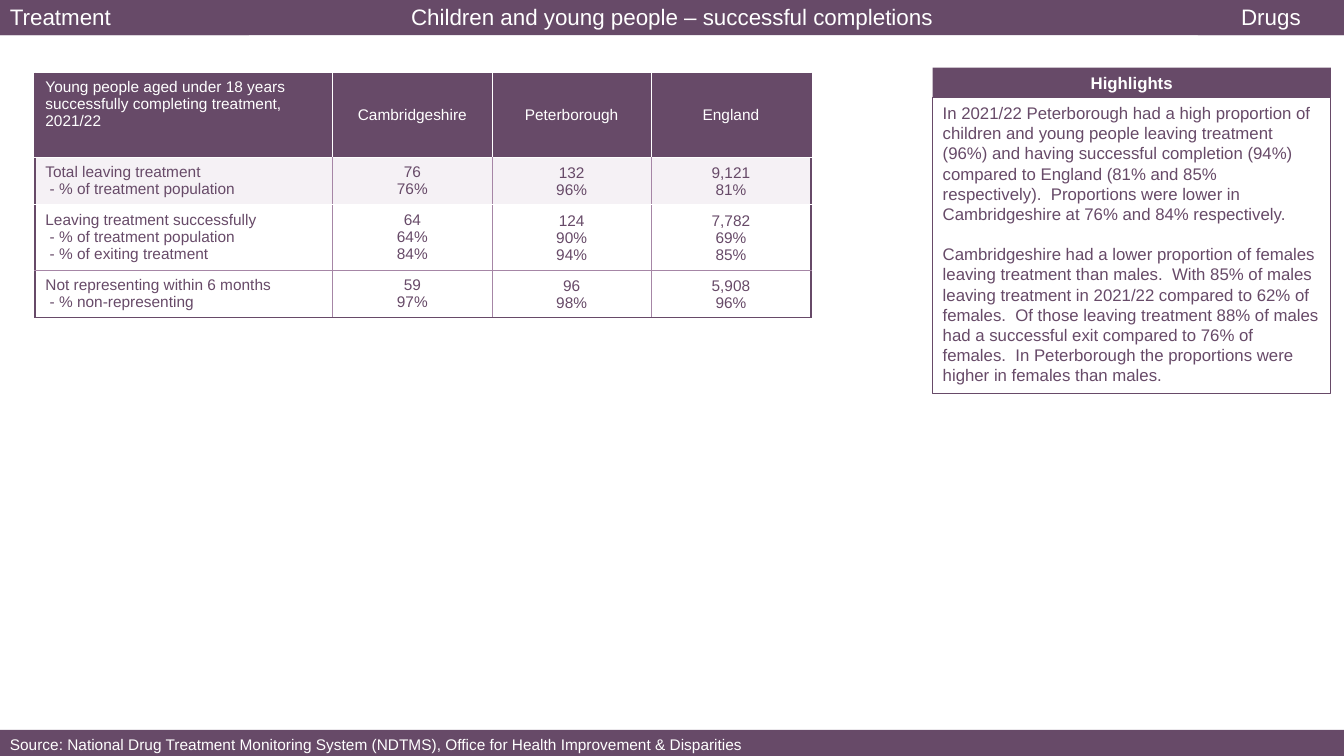
from dataclasses import dataclass
from typing import Any, Optional

from lxml import etree
from pptx import Presentation
from pptx import util as u
from pptx.dml import color
from pptx.enum import shapes, text
from pptx.oxml import ns

COLORS = {"purple": "674A68", "mauve": "A686A6", "pale": "F5F1F5", "white": "FFFFFF"}
LEFT, CENTER = text.PP_ALIGN.LEFT, text.PP_ALIGN.CENTER
MIDDLE, TOP = text.MSO_ANCHOR.MIDDLE, text.MSO_ANCHOR.TOP


@dataclass
class Panel:
    left: float
    top: float
    width: float
    height: float
    paragraphs: list[str]
    size: int
    align: Any = LEFT
    bold: bool = False
    fill: Optional[str] = "purple"
    line: Optional[str] = None
    ink: str = "white"
    gap: float = 0


@dataclass
class Row:
    height: float
    cells: list[str]
    fill: Optional[str]
    ink: str
    divider: str  # vertical rules inside the row
    below: str  # rule under the row


def rgb(name: str) -> color.RGBColor:
    return color.RGBColor.from_string(COLORS[name])


def apply(target: Any, values: dict[str, Any]) -> None:
    for name, value in values.items():
        setattr(target, name, value)


def set_fill(fill: Any, name: Optional[str]) -> None:
    if name is None:
        fill.background()
    else:
        fill.solid()
        fill.fore_color.rgb = rgb(name)


def write(frame: Any, paragraphs: list[str], size: int, ink: str, align: Any,
          bold: bool = False, gap: float = 0) -> None:
    for index, content in enumerate(paragraphs):
        paragraph = frame.paragraphs[0] if index == 0 else frame.add_paragraph()
        apply(paragraph, {"alignment": align, "line_spacing": 1.0, "space_after": u.Pt(0),
                          "space_before": u.Pt(gap if index else 0)})
        run = paragraph.add_run()
        run.text = content
        apply(run.font, {"name": "Arial", "size": u.Pt(size), "bold": bold})
        run.font.color.rgb = rgb(ink)


def draw_panel(slide: Any, panel: Panel, placeholder: Any = None) -> None:
    shape = placeholder
    if shape is None:
        shape = slide.shapes.add_shape(shapes.MSO_SHAPE.RECTANGLE, 0, 0, 0, 0)
        shape.shadow.inherit = False
    apply(shape, {side: u.Inches(getattr(panel, side))
                  for side in ("left", "top", "width", "height")})
    set_fill(shape.fill, panel.fill)
    set_fill(shape.line.fill, panel.line)
    if panel.line:
        shape.line.width = u.Pt(0.75)
    frame = shape.text_frame
    apply(frame, {"word_wrap": True, "vertical_anchor": TOP,
                  "auto_size": text.MSO_AUTO_SIZE.NONE})
    write(frame, panel.paragraphs, panel.size, panel.ink, panel.align, panel.bold, panel.gap)


def remove_bullets(shape: Any) -> None:
    for paragraph in shape.text_frame.paragraphs:
        properties = paragraph._p.get_or_add_pPr()
        properties.set("marL", "0")
        properties.set("indent", "0")
        etree.SubElement(properties, ns.qn("a:buNone"))


def set_borders(cell: Any, edges: dict[str, tuple[str, float]]) -> None:
    properties = cell._tc.get_or_add_tcPr()
    for index, (edge, (name, width)) in enumerate(edges.items()):
        line = etree.Element(ns.qn(f"a:{edge}"), w=str(u.Pt(width)))
        solid = etree.SubElement(line, ns.qn("a:solidFill"))
        etree.SubElement(solid, ns.qn("a:srgbClr"), val=COLORS[name])
        properties.insert(index, line)


def draw_table(slide: Any, left: float, top: float, widths: list[float],
               rows: list[Row]) -> None:
    last_row, last_column = len(rows) - 1, len(widths) - 1
    table = slide.shapes.add_table(
        len(rows), len(widths), u.Inches(left), u.Inches(top),
        u.Inches(sum(widths)), u.Inches(sum(row.height for row in rows))).table
    table.horz_banding = False
    for column, width in zip(table.columns, widths):
        column.width = u.Inches(width)
    outer = ("purple", 1.5)
    for r, row in enumerate(rows):
        table.rows[r].height = u.Inches(row.height)
        divider = (row.divider, 0.75)
        for c, content in enumerate(row.cells):
            cell = table.cell(r, c)
            cell.vertical_anchor = TOP if r == c == 0 else MIDDLE
            if r > 0 and c > 1:
                apply(cell, {"margin_left": u.Inches(0.01), "margin_right": u.Inches(0.01),
                             "margin_top": u.Inches(0.01), "margin_bottom": 0})
            set_fill(cell.fill, row.fill)
            write(cell.text_frame, content.split("\n"), 11, row.ink, CENTER if c else LEFT)
            set_borders(cell, {
                "lnL": divider if c else outer,
                "lnR": divider if c < last_column else outer,
                "lnT": (rows[r - 1].below, 0.75) if r else outer,
                "lnB": (row.below, 0.75) if r < last_row else outer})


HEADING = Panel(0, -0.02, 13.33, 0.37,
                ["Children and young people – successful completions"], 16, CENTER)
HIGHLIGHTS = Panel(9.25, 0.97, 3.95, 2.93, [
    "In 2021/22 Peterborough had a high proportion of children and young people leaving "
    "treatment (96%) and having successful completion (94%) compared to England (81% and "
    "85% respectively).  Proportions were lower in Cambridgeshire at 76% and 84% "
    "respectively.",
    "Cambridgeshire had a lower proportion of females leaving treatment than males.  With "
    "85% of males leaving treatment in 2021/22 compared to 62% of females.  Of those "
    "leaving treatment 88% of males had a successful exit compared to 76% of females.  In "
    "Peterborough the proportions were higher in females than males.",
], 12, fill=None, line="purple", ink="purple", gap=14.4)
BARS = [
    Panel(0, -0.02, 2.47, 0.37, ["Treatment"], 16),
    Panel(11.88, -0.02, 1.45, 0.37, ["Drugs"], 16, CENTER),
    Panel(9.25, 0.67, 3.95, 0.3, ["Highlights"], 12, CENTER, bold=True),
    Panel(0, 7.24, 13.33, 0.29, [
        "Source: National Drug Treatment Monitoring System (NDTMS), "
        "Office for Health Improvement & Disparities"], 11),
]
COMPLETIONS = [
    Row(0.83, ["Young people aged under 18 years successfully completing treatment, 2021/22",
               "Cambridgeshire", "Peterborough", "England"],
        "purple", "white", "white", "white"),
    Row(0.47, ["Total leaving treatment\n - % of treatment population",
               "76\n76%", "132\n96%", "9,121\n81%"],
        "pale", "purple", "mauve", "white"),
    Row(0.65, ["Leaving treatment successfully\n - % of treatment population\n"
               " - % of exiting treatment",
               "64\n64%\n84%", "124\n90%\n94%", "7,782\n69%\n85%"],
        None, "purple", "mauve", "mauve"),
    Row(0.47, ["Not representing within 6 months\n - % non-representing",
               "59\n97%", "96\n98%", "5,908\n96%"],
        None, "purple", "mauve", "purple"),
]


def main() -> None:
    presentation = Presentation()
    apply(presentation, {"slide_width": u.Inches(13.33), "slide_height": u.Inches(7.5)})
    slide = presentation.slides.add_slide(presentation.slide_layouts[1])

    # Title bar and highlights text
    draw_panel(slide, HEADING, slide.shapes.title)
    body = slide.placeholders[1]
    draw_panel(slide, HIGHLIGHTS, body)
    remove_bullets(body)

    # Corner labels, highlights heading and source bar
    for bar in BARS:
        draw_panel(slide, bar)

    # Treatment completions
    draw_table(slide, 0.35, 0.73, [2.95, 1.58, 1.58, 1.58], COMPLETIONS)

    presentation.save("out.pptx")


if __name__ == "__main__":
    main()
